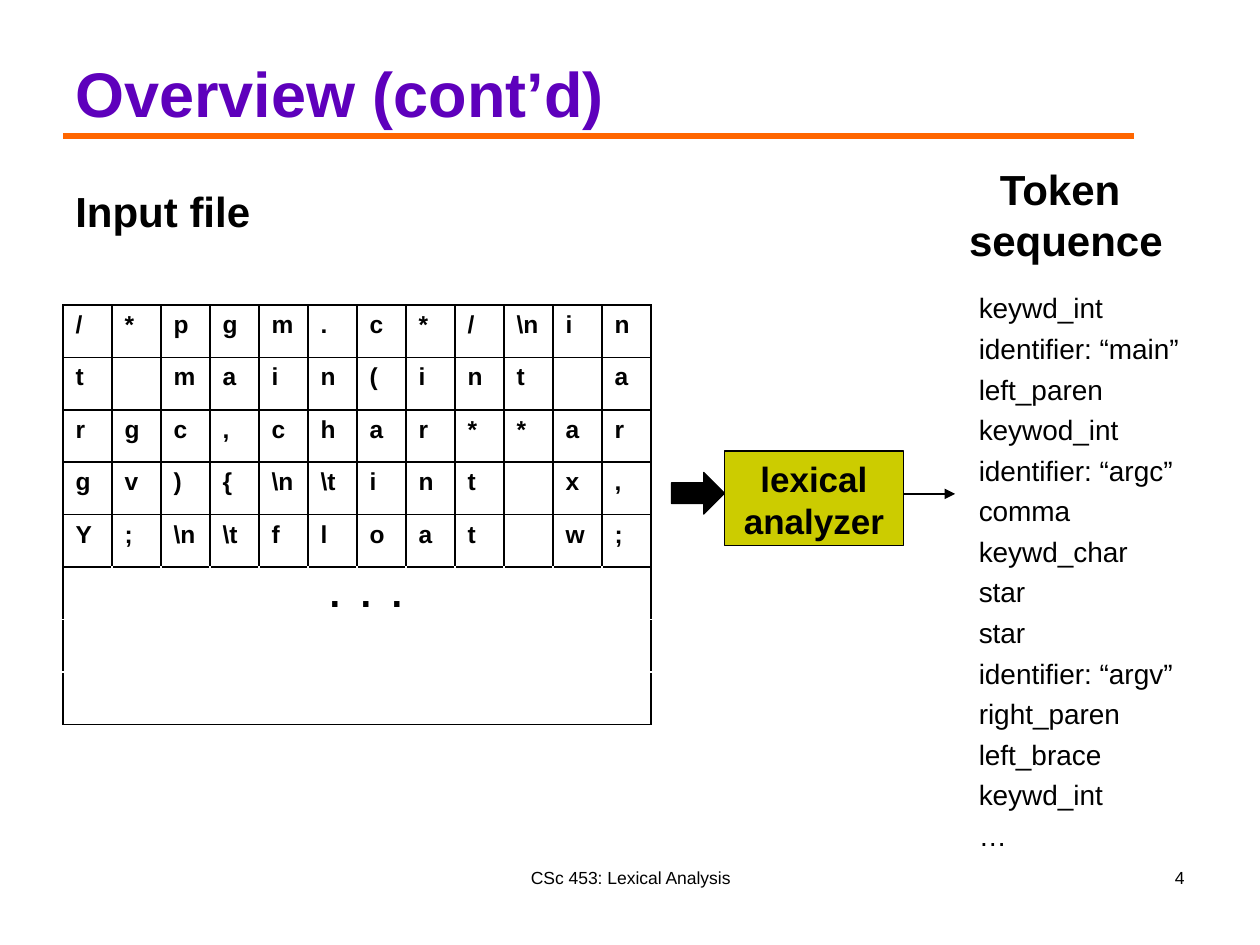
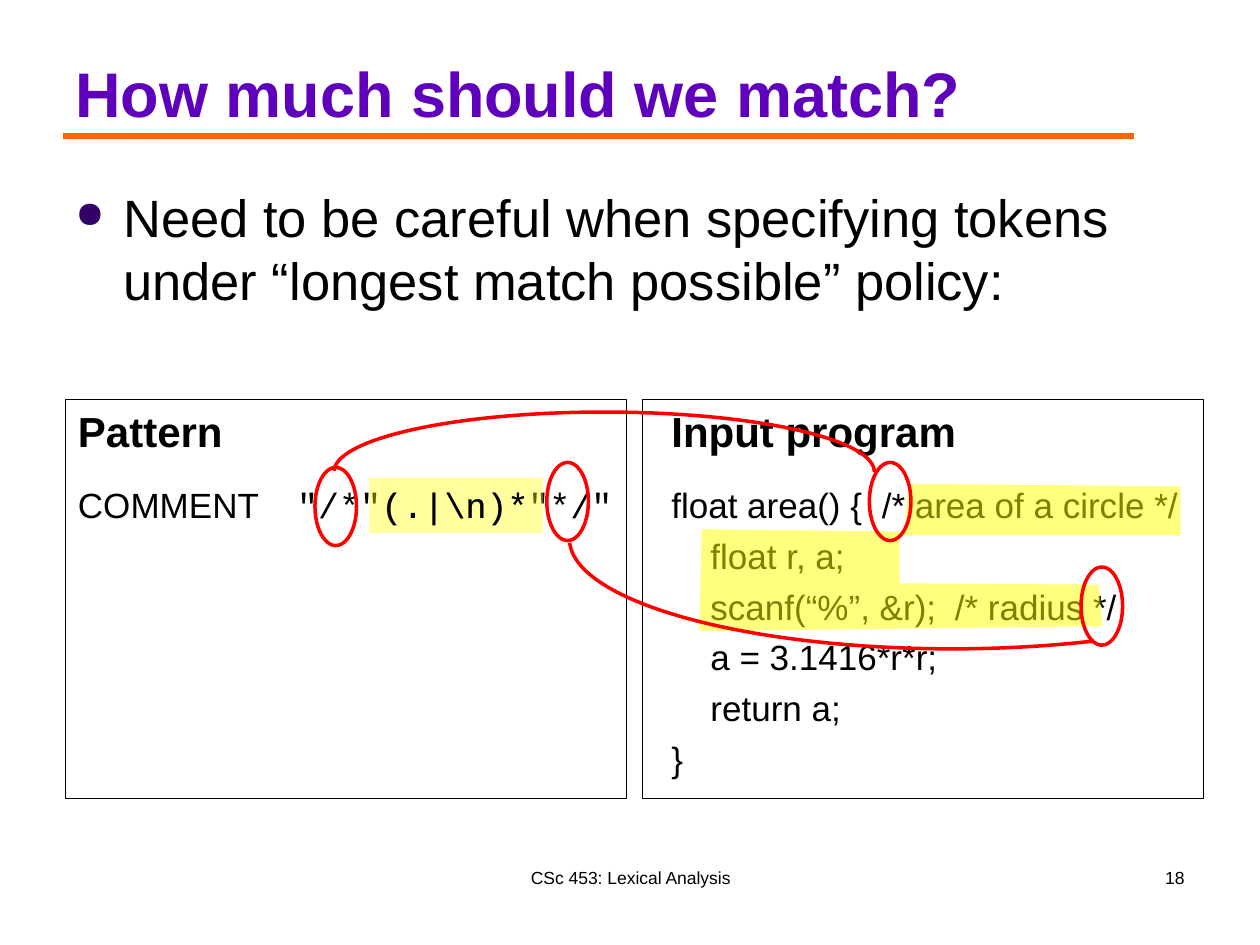
"""Build two lexical-analysis slides: the scanner overview and longest-match pitfalls."""
from dataclasses import dataclass, replace
from typing import NamedTuple, Sequence

from lxml import etree
from pptx import Presentation
from pptx import util as u
from pptx.dml import color
from pptx.enum import shapes, text
from pptx.oxml import ns

COLOURS = {
    "title": "5E00BC", "rule": "FF6600", "ink": "000000", "paper": "FFFFFF",
    "analyzer": "CCCC00", "marker": "FFFF00", "bullet": "330066", "loop": "FF0000",
}
LEFT, CENTER, RIGHT = text.PP_ALIGN.LEFT, text.PP_ALIGN.CENTER, text.PP_ALIGN.RIGHT
CODE_STOPS = (0.31, 1.67, 2.25)
PATTERN_STOPS = (1.74,)


class Box(NamedTuple):
    left: float
    top: float
    width: float
    height: float

    def lengths(self) -> list:
        return [u.Inches(value) for value in self]


@dataclass(frozen=True)
class Style:
    size: float
    bold: bool = False
    colour: str = "ink"
    font: str = "Arial"


class Span(NamedTuple):
    words: str
    style: Style


@dataclass(frozen=True)
class Block:
    box: Box
    lines: Sequence[Sequence[Span]]
    align: text.PP_ALIGN = LEFT
    gap: float = 0
    stops: Sequence[float] = ()
    wrap: bool = True
    anchor: text.MSO_ANCHOR = text.MSO_ANCHOR.TOP


@dataclass(frozen=True)
class Outline:
    kind: shapes.MSO_SHAPE
    box: Box
    line: str = "ink"
    weight: float = 0.75
    fill: str = ""
    angles: Sequence[float] = ()


TITLE = Style(36, True, "title")
HEADING = Style(24, True)
BODY = Style(30)
TOKEN = Style(16)
CODE = Style(20)
REGEX = replace(CODE, font="Courier New")
ANALYZER = replace(CODE, bold=True)
CHARACTER = Style(14, True)
FOOTER = Style(10)

INPUT_ROWS = (
    ("/", "*", "p", "g", "m", ".", "c", "*", "/", r"\n", "i", "n"),
    ("t", "", "m", "a", "i", "n", "(", "i", "n", "t", "", "a"),
    ("r", "g", "c", ",", "c", "h", "a", "r", "*", "*", "a", "r"),
    ("g", "v", ")", "{", r"\n", r"\t", "i", "n", "t", "", "x", ","),
    ("Y", ";", r"\n", r"\t", "f", "l", "o", "a", "t", "", "w", ";"),
)
OPEN_ROWS = 3
TOKENS = (
    "keywd_int", "identifier: “main”", "left_paren", "keywod_int", "identifier: “argc”",
    "comma", "keywd_char", "star", "star", "identifier: “argv”", "right_paren",
    "left_brace", "keywd_int", "…",
)
PROGRAM = (
    "float area() {\t/* area of a circle */", "\tfloat r, a;",
    "\tscanf(“%”, &r);\t/* radius */", "\ta = 3.1416*r*r;", "\treturn a;", "}",
)
MATCHED_TEXT = (
    (7.21, 3.84), (9.37, 3.86), (9.37, 4.25), (7.14, 4.25), (7.14, 4.63), (8.72, 4.64),
    (8.75, 4.97), (5.55, 5.01), (5.57, 4.2), (7.18, 4.22),
)
PANELS = (Box(0.52, 3.17, 4.45, 3.17), Box(5.1, 3.17, 4.45, 3.17))
DELIMITERS = ((2.5, 3.71), (6.9, 3.67), (4.34, 3.67), (8.58, 4.5))
ARCS = (
    (Box(2.65, 3.27, 4.29, 0.95), (108.14, 0)),
    (Box(4.52, 3.41, 6.07, 1.74), (21.45, 107.68)),
)


def rgb(name: str) -> color.RGBColor:
    return color.RGBColor.from_string(COLOURS[name])


def lines_of(words: Sequence[str], style: Style) -> list:
    return [[Span(line, style)] for line in words]


def add_spans(paragraph, spans: Sequence[Span]) -> None:
    for span in spans:
        run = paragraph.add_run()
        run.text = span.words
        run.font.size = u.Pt(span.style.size)
        run.font.bold = span.style.bold
        run.font.name = span.style.font
        run.font.color.rgb = rgb(span.style.colour)


def add_stops(paragraph, stops: Sequence[float]) -> None:
    tabs = etree.SubElement(paragraph._p.get_or_add_pPr(), ns.qn("a:tabLst"))
    for stop in stops:
        etree.SubElement(tabs, ns.qn("a:tab"), pos=str(u.Inches(stop)), algn="l")


def write(frame, block: Block) -> None:
    frame.word_wrap = block.wrap
    frame.vertical_anchor = block.anchor
    if not block.wrap:
        frame.auto_size = text.MSO_AUTO_SIZE.SHAPE_TO_FIT_TEXT
    for index, spans in enumerate(block.lines):
        paragraph = frame.add_paragraph() if index else frame.paragraphs[0]
        paragraph.alignment = block.align
        if index and block.gap:
            paragraph.space_before = u.Pt(block.gap)
        if block.stops:
            add_stops(paragraph, block.stops)
        add_spans(paragraph, spans)


def add_block(slide, block: Block):
    frame = slide.shapes.add_textbox(*block.box.lengths()).text_frame
    write(frame, block)
    return frame


def add_line(slide, start: tuple, end: tuple, colour: str, weight: float, arrow: bool = False) -> None:
    ends = [u.Inches(value) for value in (*start, *end)]
    line = slide.shapes.add_connector(shapes.MSO_CONNECTOR.STRAIGHT, *ends)
    line.line.color.rgb = rgb(colour)
    line.line.width = u.Pt(weight)
    if arrow:
        etree.SubElement(line.line._get_or_add_ln(), ns.qn("a:tailEnd"), type="triangle")
    etree.SubElement(line._element.spPr, ns.qn("a:effectLst"))


def add_outline(slide, outline: Outline):
    shape = slide.shapes.add_shape(outline.kind, *outline.box.lengths())
    shape.shadow.inherit = False
    for index, angle in enumerate(outline.angles):
        shape.adjustments[index] = angle
    if outline.fill:
        shape.fill.solid()
        shape.fill.fore_color.rgb = rgb(outline.fill)
    else:
        shape.fill.background()
    shape.line.color.rgb = rgb(outline.line)
    shape.line.width = u.Pt(outline.weight)
    return shape


def highlight(shape, opacity: int) -> None:
    shape.shadow.inherit = False
    shape.line.fill.background()
    shape.fill.solid()
    shape.fill.fore_color.rgb = rgb("marker")
    marker = shape._element.spPr.find(ns.qn("a:solidFill"))[0]
    etree.SubElement(marker, ns.qn("a:alpha"), val=str(opacity * 1000))


def set_borders(cell, sides: Sequence[str]) -> None:
    properties = cell._tc.get_or_add_tcPr()
    for index, side in enumerate(sides):
        border = etree.Element(ns.qn(f"a:ln{side}"), w=str(u.Pt(1)))
        fill = etree.SubElement(border, ns.qn("a:solidFill"))
        etree.SubElement(fill, ns.qn("a:srgbClr"), val=COLOURS["ink"])
        properties.insert(index, border)


def add_input_table(slide) -> None:
    row_count, column_count = len(INPUT_ROWS) + OPEN_ROWS, len(INPUT_ROWS[0])
    box = Box(0.5, 2.42, 4.67, 3.33)
    table = slide.shapes.add_table(row_count, column_count, *box.lengths()).table
    table.first_row = table.horz_banding = False
    for row in range(row_count):
        table.rows[row].height = u.Inches(box.height / row_count)
        filled = row < len(INPUT_ROWS)
        for column in range(column_count):
            table.columns[column].width = u.Inches(box.width / column_count)
            cell = table.cell(row, column)
            cell.fill.solid()
            cell.fill.fore_color.rgb = rgb("paper")
            edges = {
                "L": column == 0, "R": column == column_count - 1,
                "T": row == len(INPUT_ROWS), "B": row == row_count - 1,
            }
            set_borders(cell, [side for side, shown in edges.items() if filled or shown])
            if filled and INPUT_ROWS[row][column]:
                add_spans(cell.text_frame.paragraphs[0], [Span(INPUT_ROWS[row][column], CHARACTER)])


def start_slide(deck, title: str, number: int):
    slide = deck.slides.add_slide(deck.slide_layouts[6])
    add_line(slide, (0.5, 1.08), (9, 1.08), "rule", 3.75)
    add_block(slide, Block(Box(0.5, 0.13, 9, 0.95), lines_of([title], TITLE), anchor=text.MSO_ANCHOR.BOTTOM))
    course = lines_of(["CSc 453: Lexical Analysis"], FOOTER)
    add_block(slide, Block(Box(3.42, 6.83, 3.17, 0.5), course, CENTER))
    add_block(slide, Block(Box(7.17, 6.83, 2.33, 0.5), lines_of([str(number)], FOOTER), RIGHT))
    return slide


def build_overview(deck) -> None:
    slide = start_slide(deck, "Overview (cont’d)", 4)
    add_input_table(slide)
    analyzer_box = Box(5.75, 3.58, 1.42, 0.75)
    analyzer = add_outline(slide, Outline(shapes.MSO_SHAPE.RECTANGLE, analyzer_box, fill="analyzer"))
    write(analyzer.text_frame, Block(analyzer_box, lines_of(["lexical", "analyzer"], ANALYZER), CENTER))
    add_outline(slide, Outline(shapes.MSO_SHAPE.RIGHT_ARROW, Box(5.33, 3.75, 0.42, 0.33), fill="ink"))
    add_line(slide, (7.17, 3.92), (7.58, 3.92), "ink", 0.75, arrow=True)
    for block in (
        Block(Box(7.67, 2.26, 2, 4.53), lines_of(TOKENS, TOKEN), gap=4),
        Block(Box(0.5, 1.42, 1.6, 0.51), lines_of(["Input file"], HEADING), wrap=False),
        Block(Box(7.58, 1.25, 1.76, 0.91), lines_of(["Token ", "sequence"], HEADING), CENTER, wrap=False),
        Block(Box(2.5, 4.33, 0.82, 0.64), lines_of([". . ."], Style(32))),
    ):
        add_block(slide, block)


def add_bullet(slide, words: str) -> None:
    frame = add_block(slide, Block(Box(0.5, 1.42, 9, 1.17), lines_of([words], BODY)))
    properties = frame.paragraphs[0]._p.get_or_add_pPr()
    properties.set("marL", str(u.Inches(0.38)))
    properties.set("indent", str(u.Inches(-0.38)))
    tint = etree.SubElement(properties, ns.qn("a:buClr"))
    etree.SubElement(tint, ns.qn("a:srgbClr"), val=COLOURS["bullet"])
    etree.SubElement(properties, ns.qn("a:buSzPct"), val="70000")
    etree.SubElement(properties, ns.qn("a:buChar"), char="●")


def build_matching(deck) -> None:
    slide = start_slide(deck, "How much should we match?", 18)
    add_bullet(slide, "Need to be careful when specifying tokens under “longest match possible” policy:")
    pattern = [[Span("COMMENT\t", CODE), Span(r"″/*″(.|\n)*″*/″", REGEX)]]
    for block in (
        Block(Box(0.52, 3.17, 4.42, 0.55), lines_of(["Pattern"], HEADING)),
        Block(Box(0.52, 3.79, 4.45, 2.29), pattern, stops=PATTERN_STOPS),
        Block(Box(5.23, 3.17, 4.42, 0.55), lines_of(["Input program"], HEADING)),
        Block(Box(5.23, 3.79, 4.28, 2.46), lines_of(PROGRAM, CODE), gap=5, stops=CODE_STOPS),
    ):
        add_block(slide, block)

    repeat_box = Box(2.93, 3.79, 1.38, 0.44)
    repeat = slide.shapes.add_shape(shapes.MSO_SHAPE.RECTANGLE, *repeat_box.lengths())
    highlight(repeat, 38)
    write(repeat.text_frame, Block(repeat_box, lines_of([r"(.|\n)*"], REGEX), wrap=False))

    corners = [(u.Inches(x), u.Inches(y)) for x, y in MATCHED_TEXT]
    matched = slide.shapes.build_freeform(*corners[0])
    matched.add_line_segments(corners[1:], close=True)
    highlight(matched.convert_to_shape(), 50)

    for panel in PANELS:
        add_outline(slide, Outline(shapes.MSO_SHAPE.RECTANGLE, panel))
    for left, top in DELIMITERS:
        add_outline(slide, Outline(shapes.MSO_SHAPE.OVAL, Box(left, top, 0.33, 0.62), "loop", 2))
    for box, angles in ARCS:
        add_outline(slide, Outline(shapes.MSO_SHAPE.ARC, box, "loop", 2, angles=angles))


def main() -> None:
    deck = Presentation()
    deck.slide_width, deck.slide_height = u.Inches(10), u.Inches(7.5)
    build_overview(deck)
    build_matching(deck)
    deck.save("out.pptx")


if __name__ == "__main__":
    main()
